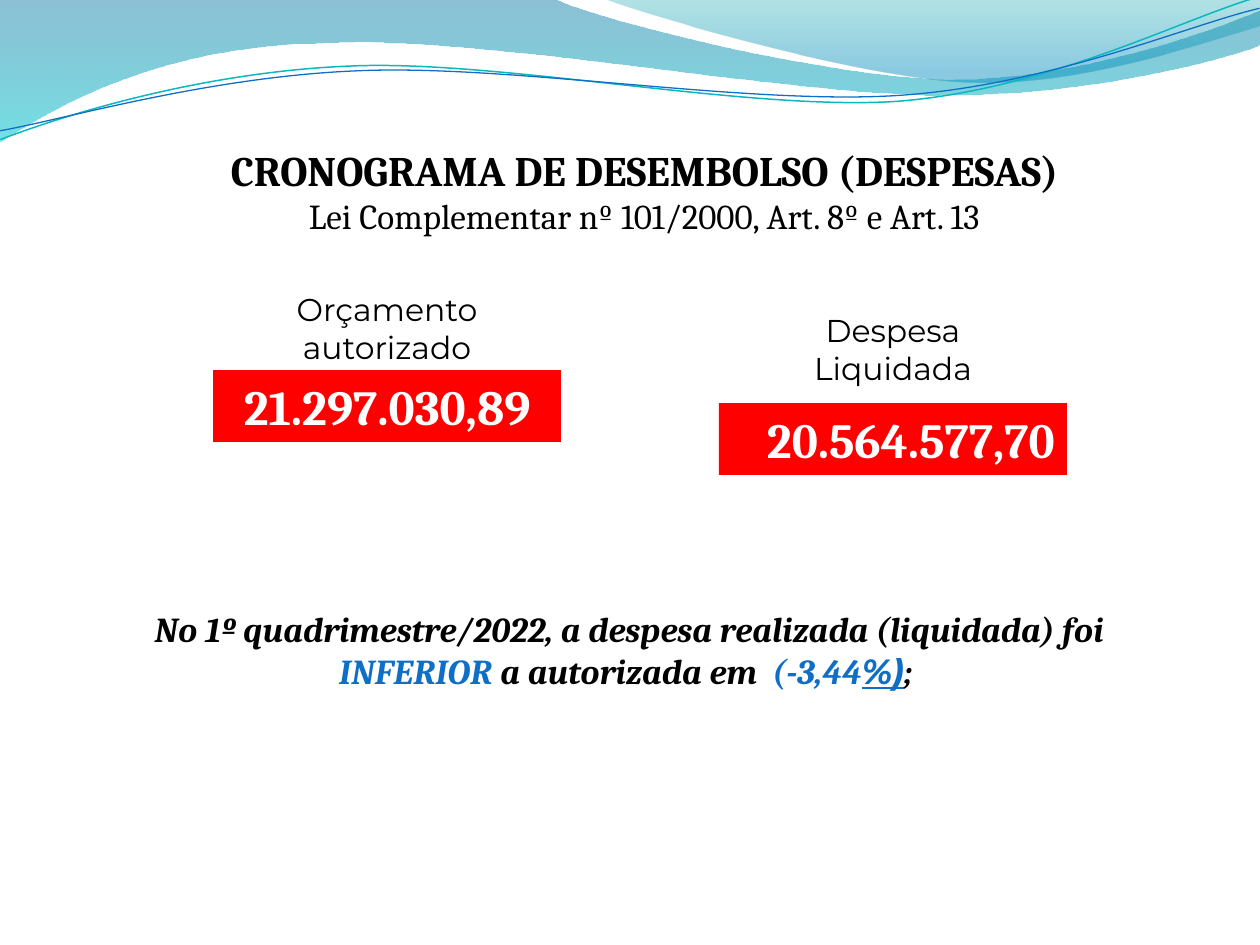
from lxml.etree import SubElement
from pptx import Presentation
from pptx.dml.color import RGBColor
from pptx.enum.shapes import MSO_SHAPE
from pptx.enum.text import MSO_ANCHOR, MSO_AUTO_SIZE, PP_ALIGN
from pptx.oxml.ns import qn
from pptx.util import Pt

PX = 914400 / 126
WAVE_LINE_TILT = -2.7
BLACK, WHITE, BLUE, RED = "000000", "FFFFFF", "0F6FC6", "FF0000"
HEADING = {"name": "Cambria", "size": Pt(24), "bold": True}
SUBHEADING = {"name": "Cambria", "size": Pt(20), "bold": False}
AMOUNT = {"name": "Cambria", "size": Pt(28), "bold": True}
LABEL = {"name": "Montserrat", "size": Pt(18)}
REMARK = {"name": "Cambria", "size": Pt(20), "bold": True, "italic": True}

# Each segment is a list of points: one for a straight line, three for a Bézier curve.
WAVE = [[(0, 0)], [(554, -1)],
        [(600, 21), (837, 79), (955, 79)], [(1075, 79), (1207, 33), (1260, 11)],
        [(1261, 45)], [(1239, 55), (1096, 96), (940, 95)],
        [(784, 95), (481, 35), (324, 43)], [(163, 45), (58, 105), (-1, 142)], [(0, 0)]]
CREST = [[(604, -1)], [(641, 14), (859, 78), (969, 82)],
         [(1079, 87), (1211, 40), (1260, 26)], [(1260, 0)], [(604, -1)]]
TEAL_LINE = [[(-2, 110)], [(58, 90), (199, 52), (350, 53)],
             [(499, 53), (745, 117), (896, 114)], [(1049, 109), (1184, 45), (1260, 27)]]
BLUE_LINE = [[(-2, 101)], [(57, 94), (207, 57), (357, 58)],
             [(509, 58), (750, 112), (902, 108)], [(1052, 104), (1188, 52), (1262, 38)]]


def emu(px):
    return round(px * PX)


def color(hex_code):
    return RGBColor.from_string(hex_code)


def add_outline(slide, segments, close):
    """Build the outline through all points, then bend each three-point segment."""
    start, *rest = [point for segment in segments for point in segment]
    builder = slide.shapes.build_freeform(*start, scale=PX)
    builder.add_line_segments(rest, close=close)
    outline = builder.convert_to_shape()
    outline.shadow.inherit = False
    steps = iter(list(outline._element.iter(qn("a:lnTo"))))
    for segment in segments[1:]:
        first, *others = [next(steps) for _ in segment]
        if others:
            first.tag = qn("a:cubicBezTo")
            for step in others:
                first.append(step[0])
                step.getparent().remove(step)
    return outline


def add_wave(slide, segments, stops):
    """Stops are (position, colour, opacity in percent), from top to bottom."""
    wave = add_outline(slide, segments, True)
    wave.line.fill.background()
    wave.fill.gradient()
    wave.fill.gradient_angle = 270
    for stop, (position, hex_code, _) in zip(wave.fill.gradient_stops, stops):
        stop.position = position
        stop.color.rgb = color(hex_code)
    for tint, (_, _, opacity) in zip(wave._element.iter(qn("a:srgbClr")), stops):
        SubElement(tint, qn("a:alpha"), val=str(opacity * 1000))


def add_wave_line(slide, segments, hex_code, width):
    wave_line = add_outline(slide, segments, False)
    wave_line.rotation = WAVE_LINE_TILT
    wave_line.fill.background()
    wave_line.line.color.rgb = color(hex_code)
    wave_line.line.width = Pt(width)


def write(shape, paragraphs, align=PP_ALIGN.CENTER):
    """Each paragraph is a list of (text, colour, font values)."""
    frame = shape.text_frame
    frame.word_wrap = True
    frame.auto_size = MSO_AUTO_SIZE.NONE
    frame.vertical_anchor = MSO_ANCHOR.TOP
    for index, runs in enumerate(paragraphs):
        paragraph = frame.add_paragraph() if index else frame.paragraphs[0]
        paragraph.alignment = align
        for text, hex_code, font_values in runs:
            run = paragraph.add_run()
            run.text = text
            run.font.color.rgb = color(hex_code)
            for key, value in font_values.items():
                setattr(run.font, key, value)


def add_text(slide, box, paragraphs):
    write(slide.shapes.add_textbox(*map(emu, box)), paragraphs)


def add_amount(slide, left, top, amount, align):
    bar = slide.shapes.add_shape(MSO_SHAPE.RECTANGLE, *map(emu, (left, top, 348, 72)))
    bar.shadow.inherit = False
    bar.fill.solid()
    bar.fill.fore_color.rgb = color(RED)
    bar.line.fill.background()
    write(bar, [[(amount, WHITE, AMOUNT)]], align)


def set_title(slide, box, paragraphs):
    title = slide.shapes.title
    title.left, title.top, title.width, title.height = map(emu, box)
    write(title, paragraphs)


def main():
    presentation = Presentation()
    presentation.slide_width, presentation.slide_height = emu(1260), emu(945)
    slide = presentation.slides.add_slide(presentation.slide_layouts[5])

    add_wave(slide, WAVE, [(0, "0074A1", 45), (1, "00C6CF", 55)])
    add_wave(slide, CREST, [(0, "00A1A9", 30), (0.8, "008BBF", 45)])
    add_wave_line(slide, TEAL_LINE, "0AB8BF", 0.85)
    add_wave_line(slide, BLUE_LINE, BLUE, 0.75)

    set_title(slide, (144, 138, 1001, 106), [
        [("CRONOGRAMA DE DESEMBOLSO (DESPESAS)", BLACK, HEADING)],
        [("Lei Complementar nº 101/2000, Art. 8º e Art. 13", BLACK, SUBHEADING)]])
    add_text(slide, (94, 601, 1071, 97), [[
        ("No 1º quadrimestre/2022, a despesa realizada (liquidada) foi ", BLACK, REMARK),
        ("INFERIOR", BLUE, REMARK),
        (" a autorizada em ", BLACK, REMARK),
        (" (-3,44", BLUE, REMARK),
        ("%)", BLUE, {**REMARK, "name": "Montserrat", "underline": True}),
        ("; ", BLACK, REMARK)]])

    add_amount(slide, 213, 370, "21.297.030,89", PP_ALIGN.CENTER)
    add_amount(slide, 719, 403, "20.564.577,70", PP_ALIGN.RIGHT)
    add_text(slide, (263, 284, 248, 89), [[("Orçamento autorizado", BLACK, LABEL)]])
    add_text(slide, (739, 305, 308, 89), [[("Despesa Liquidada", BLACK, LABEL)]])

    presentation.save("out.pptx")


if __name__ == "__main__":
    main()
